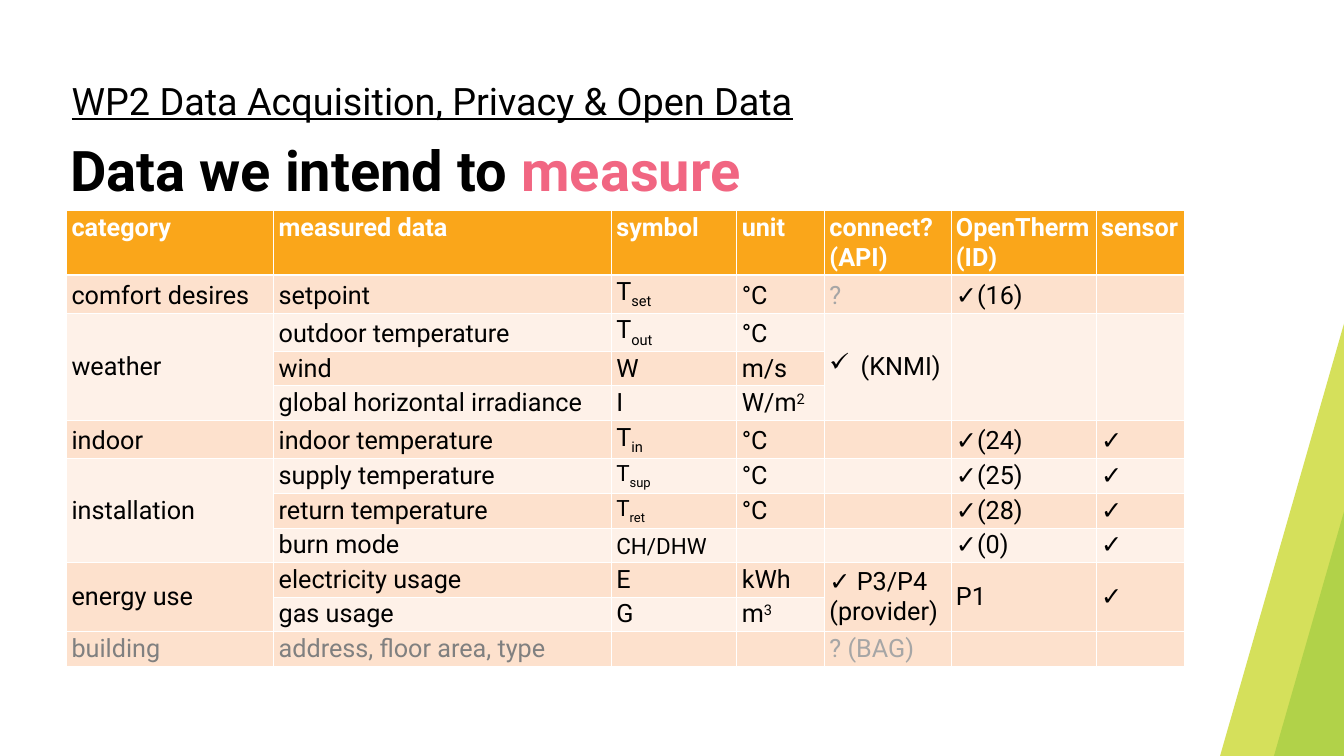
from lxml import etree
from pptx import Presentation
from pptx.dml.color import RGBColor
from pptx.enum.shapes import MSO_SHAPE
from pptx.enum.text import MSO_ANCHOR, MSO_AUTO_SIZE, PP_ALIGN
from pptx.oxml.ns import qn
from pptx.util import Inches, Pt

RECTANGLE = MSO_SHAPE.RECTANGLE
TOP, MIDDLE, BOTTOM = MSO_ANCHOR.TOP, MSO_ANCHOR.MIDDLE, MSO_ANCHOR.BOTTOM
LEFT = PP_ALIGN.LEFT
NO_AUTOFIT = MSO_AUTO_SIZE.NONE

FONT = "Roboto"
BLACK = RGBColor(0x00, 0x00, 0x00)
WHITE = RGBColor(0xFF, 0xFF, 0xFF)
PINK = RGBColor(0xF1, 0x66, 0x82)
ORANGE = RGBColor(0xFA, 0xA6, 0x1A)
BAND_DARK = RGBColor(0xFD, 0xE1, 0xCD)
BAND_LIGHT = RGBColor(0xFE, 0xF1, 0xE8)
GREY = RGBColor(0x80, 0x80, 0x80)
LIGHT_GREY = RGBColor(0xA6, 0xA6, 0xA6)
LIME = RGBColor(0xD5, 0xE0, 0x5B)
GREEN = RGBColor(0xB1, 0xD2, 0x49)

COLUMNS = [4.11, 6.7, 2.49, 1.74, 2.51, 2.88, 1.76]
HEADER_HEIGHT, ROW_HEIGHT = 1.13, 0.61

# "_" starts a subscript, "^" a superscript
ROWS = [
    ["category", "measured data", "symbol", "unit", "connect?\n(API)", "OpenTherm (ID)", "sensor"],
    ["comfort desires", "setpoint", "T_set", "°C", "?", "✓(16)", ""],
    ["weather", "outdoor temperature", "T_out", "°C", "(KNMI)", "", ""],
    ["", "wind", "W", "m/s", "", "", ""],
    ["", "global horizontal irradiance", "I", "W/m^2", "", "", ""],
    ["indoor", "indoor temperature", "T_in", "°C", "", "✓(24)", "✓"],
    ["installation", "supply temperature", "T_sup", "°C", "", "✓(25)", "✓"],
    ["", "return temperature", "T_ret", "°C", "", "✓(28)", "✓"],
    ["", "burn mode", "CH/DHW", "", "", "✓(0)", "✓"],
    ["energy use", "electricity usage", "E", "kWh", "✓ P3/P4 (provider)", "P1", "✓"],
    ["", "gas usage", "G", "m^3", "", "", ""],
    ["building", "address, floor area, type", "", "", "? (BAG)", "", ""],
]
# (first row, row count, columns)
MERGES = [(2, 3, (0, 4, 5, 6)), (6, 3, (0,)), (9, 2, (0, 4, 5, 6))]
SYMBOL_COLUMN, SMALL_SYMBOL_ROWS = 2, (6, 7, 8)
BASELINES = {"_": -25, "^": 30}


def add_run(p, text, size, color, bold=False, baseline=0):
    r = p.add_run()
    r.text = text
    r.font.name = FONT
    r.font.size = Pt(size)
    r.font.bold = bold
    r.font.color.rgb = color
    if baseline:
        r.font._element.set("baseline", str(baseline * 1000))
    return r


def set_bullet(p, char=None, indent=0):
    pPr = p._p.get_or_add_pPr()
    pPr.set("marL", str(Inches(indent)))
    pPr.set("indent", str(-Inches(indent)))
    if char:
        etree.SubElement(pPr, qn("a:buChar"), char=char)
    else:
        etree.SubElement(pPr, qn("a:buNone"))


def set_borders(cell, widths):
    tcPr = cell._tc.get_or_add_tcPr()
    for side, width in widths.items():
        ln = etree.SubElement(tcPr, qn(f"a:ln{side}"), w=str(Pt(width)))
        fill = etree.SubElement(ln, qn("a:solidFill"))
        etree.SubElement(fill, qn("a:srgbClr"), val=str(WHITE))


def add_cell_text(p, text, size, color, bold):
    mark = next((m for m in BASELINES if m in text), None)
    base, _, script = text.partition(mark) if mark else (text, "", "")
    for i, line in enumerate(base.split("\n")):
        if i:
            p.add_line_break()
        add_run(p, line, size, color, bold)
    if script:
        add_run(p, script, size, color, bold, BASELINES[mark])


def text_color(row, text):
    if row == 0:
        return WHITE
    if text.startswith("?"):
        return LIGHT_GREY
    return GREY if row == len(ROWS) - 1 else BLACK


def add_stripes(slide, stripes):
    for left, top, width, height, color in stripes:
        s = slide.shapes.add_shape(RECTANGLE, Inches(left), Inches(top), Inches(width), Inches(height))
        s.rotation = 16
        s.shadow.inherit = False
        s.fill.solid()
        s.fill.fore_color.rgb = color
        s.line.fill.background()


def place_placeholder(sp, left, top, width, height):
    sp.left, sp.top, sp.width, sp.height = map(Inches, (left, top, width, height))
    tf = sp.text_frame
    tf.word_wrap = True
    tf.auto_size = NO_AUTOFIT
    tf.vertical_anchor = TOP
    p = tf.paragraphs[0]
    set_bullet(p)
    p.alignment = LEFT
    p.space_before = Pt(0)
    return p


def add_headings(slide, left, top, width):
    # Work package line
    p = place_placeholder(slide.placeholders[1], left, top, width, 1.04)
    p.line_spacing = 0.9
    add_run(p, "WP2 Data Acquisition, Privacy & Open Data", 54, BLACK).font.underline = True
    # Title
    p = place_placeholder(slide.shapes.title, left - 0.02, top + 1.14, width, 2.9)
    p.line_spacing = Pt(90)
    add_run(p, "Data we intend to ", 80, BLACK, bold=True)
    add_run(p, "measure", 80, PINK, bold=True)


def add_measurements(slide, left, top):
    height = HEADER_HEIGHT + ROW_HEIGHT * (len(ROWS) - 1)
    table = slide.shapes.add_table(len(ROWS), len(COLUMNS), Inches(left), Inches(top),
                                   Inches(sum(COLUMNS)), Inches(height)).table
    table.horz_banding = False
    for column, width in zip(table.columns, COLUMNS):
        column.width = Inches(width)
    for i, row in enumerate(table.rows):
        row.height = Inches(ROW_HEIGHT if i else HEADER_HEIGHT)
    for first, count, columns in MERGES:
        for c in columns:
            table.cell(first, c).merge(table.cell(first + count - 1, c))

    for i, texts in enumerate(ROWS):
        header = i == 0
        for j, text in enumerate(texts):
            cell = table.cell(i, j)
            set_borders(cell, {"L": 1, "R": 1, "T": 3 if i == 1 else 1, "B": 3 if header else 1})
            cell.fill.solid()
            cell.fill.fore_color.rgb = ORANGE if header else BAND_DARK if i % 2 else BAND_LIGHT
            centred = cell.is_merge_origin or (i == len(ROWS) - 1 and j != 1)
            cell.vertical_anchor = TOP if header else MIDDLE if centred else BOTTOM
            if not text:
                continue
            p = cell.text_frame.paragraphs[0]
            if text == "(KNMI)":
                set_bullet(p, "✓", 0.62)
            size = 32 if j == SYMBOL_COLUMN and i in SMALL_SYMBOL_ROWS else 36
            add_cell_text(p, text, size, text_color(i, text), header)


def main():
    prs = Presentation()
    prs.slide_width, prs.slide_height = Inches(26.67), Inches(15)
    slide = prs.slides.add_slide(prs.slide_layouts[1])
    add_stripes(slide, [(25.5, 5.42, 1.39, 10.36, LIME), (26.05, 9.11, 1.79, 6.66, GREEN)])
    add_measurements(slide, 1.32, 4.18)
    add_headings(slide, 1.32, 1.59, 23)
    prs.save("out.pptx")


if __name__ == "__main__":
    main()
